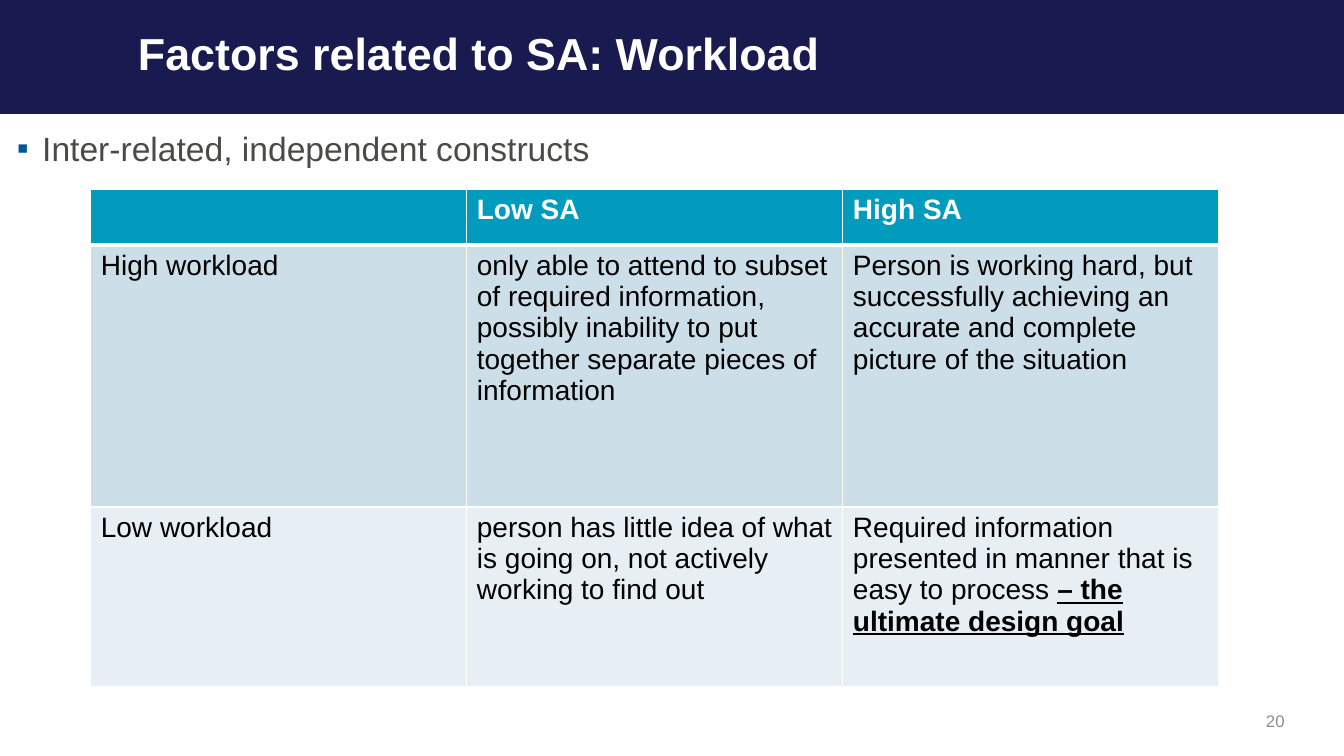
"""Builds a slide on how workload relates to situation awareness."""
from dataclasses import dataclass

from lxml.etree import SubElement
from pptx import Presentation
from pptx.dml.color import RGBColor
from pptx.enum.shapes import MSO_SHAPE as Shape
from pptx.enum.text import MSO_ANCHOR as Anchor, PP_ALIGN as Align
from pptx.oxml.ns import qn
from pptx.util import Inches, Pt


@dataclass(frozen=True)
class Theme:
    font: str = "Arial"
    banner: str = "191A4F"
    white: str = "FFFFFF"
    black: str = "000000"
    body: str = "4A4A49"
    bullet: str = "005697"
    header: str = "009BBD"
    bands: tuple = ("CCDEE8", "E7EFF4")
    number: str = "8C8C8C"
    title_size: int = 32
    body_size: int = 24
    table_size: int = 20
    number_size: int = 12
    border: int = 1
    header_border: int = 3


THEME = Theme()
COLUMN_WIDTH = 3.73
ROW_HEIGHTS = (0.55, 2.6, 1.78)
WORKLOAD_ROWS = (
    ("", "Low SA", "High SA"),
    (
        "High workload",
        "only able to attend to subset of required information, possibly "
        "inability to put together separate pieces of information",
        "Person is working hard, but successfully achieving an accurate and "
        "complete picture of the situation",
    ),
    (
        "Low workload",
        "person has little idea of what is going on, not actively working to find out",
        "Required information presented in manner that is easy to process ",
    ),
)
DESIGN_GOAL = "– the ultimate design goal"


def style_font(paragraph, size, color, bold=False):
    """Set the font of a whole paragraph."""
    font = paragraph.font
    font.name = THEME.font
    font.size = Pt(size)
    font.bold = bold
    font.color.rgb = RGBColor.from_string(color)


def paint(fill, color):
    """Give a fill one solid colour."""
    fill.solid()
    fill.fore_color.rgb = RGBColor.from_string(color)


def add_banner(slide):
    """Draw the dark band behind the title."""
    banner = slide.shapes.add_shape(
        Shape.RECTANGLE, 0, 0, Inches(13.33), Inches(1.13))
    banner.shadow.inherit = False
    paint(banner.fill, THEME.banner)
    banner.line.fill.background()


def add_text(slide, text, left, top, width, height, anchor=Anchor.TOP):
    """Add a wrapped text box and return its paragraph."""
    box = slide.shapes.add_textbox(
        Inches(left), Inches(top), Inches(width), Inches(height))
    frame = box.text_frame
    frame.word_wrap = True
    frame.vertical_anchor = anchor
    paragraph = frame.paragraphs[0]
    paragraph.text = text
    return paragraph


def add_bullet(paragraph, color, indent):
    """Put a coloured square bullet on a hanging indent."""
    properties = paragraph._p.get_or_add_pPr()
    properties.set("marL", str(Inches(indent)))
    properties.set("indent", str(-Inches(indent)))
    bullet_color = SubElement(properties, qn("a:buClr"))
    SubElement(bullet_color, qn("a:srgbClr"), val=color)
    SubElement(properties, qn("a:buFont"), typeface=THEME.font)
    SubElement(properties, qn("a:buChar"), char="▪")


def add_borders(cell, top, bottom):
    """Draw white borders around a cell, with widths in points."""
    properties = cell._tc.get_or_add_tcPr()
    widths = {"lnL": THEME.border, "lnR": THEME.border, "lnT": top, "lnB": bottom}
    for side, width in widths.items():
        line = SubElement(properties, qn(f"a:{side}"), w=str(Pt(width)))
        solid = SubElement(line, qn("a:solidFill"))
        SubElement(solid, qn("a:srgbClr"), val=THEME.white)


def fill_cell(cell, text, row):
    """Write and style one cell according to its row."""
    is_header = row == 0
    add_borders(
        cell,
        top=THEME.header_border if row == 1 else THEME.border,
        bottom=THEME.header_border if is_header else THEME.border)
    paint(cell.fill, THEME.header if is_header else THEME.bands[row - 1])
    paragraph = cell.text_frame.paragraphs[0]
    if text:
        paragraph.text = text
    style_font(paragraph, THEME.table_size,
               THEME.white if is_header else THEME.black, is_header)


def add_workload_table(slide):
    """Add the grid of workload against situation awareness."""
    columns = len(WORKLOAD_ROWS[0])
    table = slide.shapes.add_table(
        len(WORKLOAD_ROWS), columns, Inches(0.9), Inches(1.88),
        Inches(COLUMN_WIDTH * columns), Inches(sum(ROW_HEIGHTS))).table
    for column in table.columns:
        column.width = Inches(COLUMN_WIDTH)
    for row, texts in enumerate(WORKLOAD_ROWS):
        table.rows[row].height = Inches(ROW_HEIGHTS[row])
        for column, text in enumerate(texts):
            fill_cell(table.cell(row, column), text, row)
    goal = table.cell(2, 2).text_frame.paragraphs[0].add_run()
    goal.text = DESIGN_GOAL
    goal.font.bold = True
    goal.font.underline = True


def main():
    """Build and save the slide."""
    presentation = Presentation()
    presentation.slide_width = Inches(13.33)
    presentation.slide_height = Inches(7.5)
    slide = presentation.slides.add_slide(presentation.slide_layouts[6])

    add_banner(slide)
    title = add_text(slide, "Factors related to SA: Workload",
                     1.27, -0.01, 11.57, 1.13, Anchor.MIDDLE)
    title.line_spacing = 0.9
    style_font(title, THEME.title_size, THEME.white, bold=True)

    point = add_text(slide, "Inter-related, independent constructs",
                     0.07, 1.3, 12.98, 0.5)
    point.line_spacing = 0.8
    add_bullet(point, THEME.bullet, 0.25)
    style_font(point, THEME.body_size, THEME.body)

    add_workload_table(slide)

    number = add_text(slide, "20", 9.66, 6.95, 3.18, 0.4, Anchor.MIDDLE)
    number.alignment = Align.RIGHT
    style_font(number, THEME.number_size, THEME.number)

    presentation.save("out.pptx")


if __name__ == "__main__":
    main()
